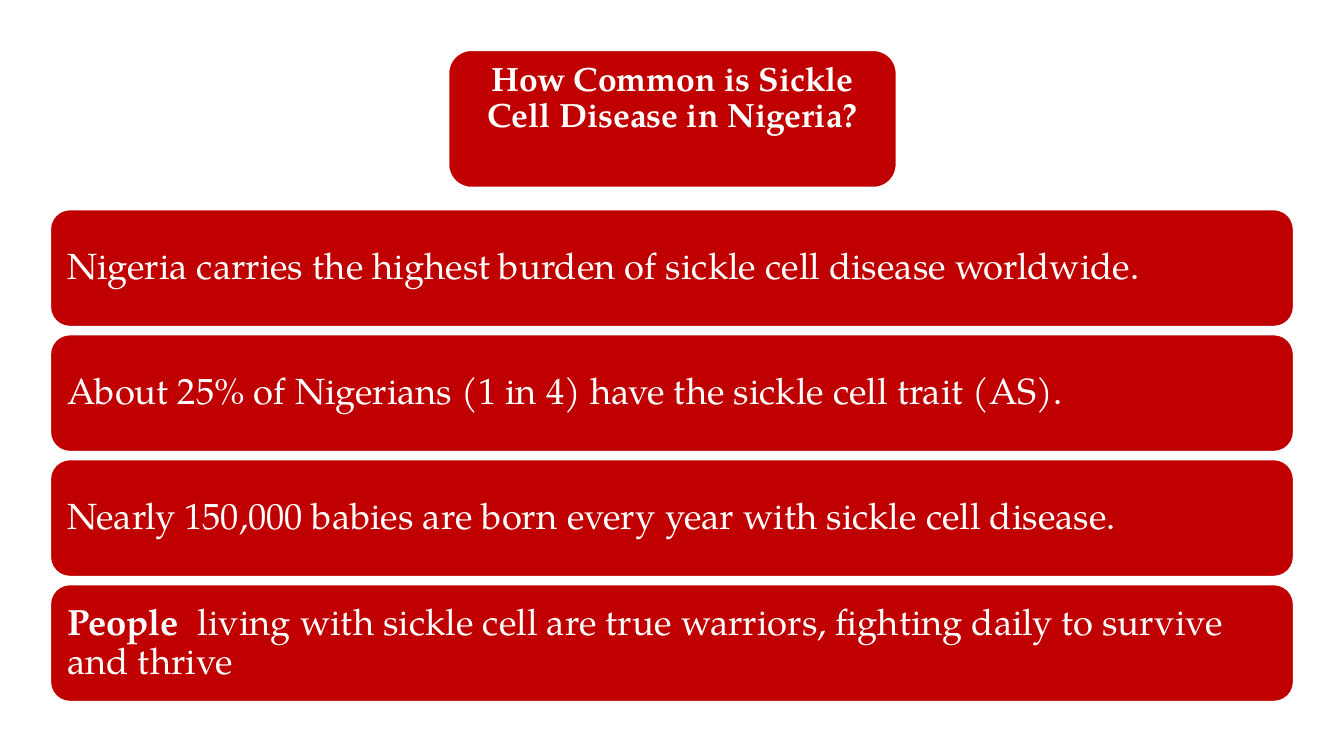
"""Build a slide on how common sickle cell disease is in Nigeria."""
from dataclasses import dataclass

from pptx import Presentation
from pptx.dml.color import RGBColor
from pptx.enum.shapes import MSO_SHAPE
from pptx.enum.text import MSO_ANCHOR, MSO_AUTO_SIZE, PP_ALIGN
from pptx.util import Inches, Pt

ROUND = MSO_SHAPE.ROUNDED_RECTANGLE
TOP, MIDDLE = MSO_ANCHOR.TOP, MSO_ANCHOR.MIDDLE
LEFT, CENTER = PP_ALIGN.LEFT, PP_ALIGN.CENTER
FIXED = MSO_AUTO_SIZE.NONE


@dataclass(frozen=True)
class Theme:
    face: str = "TeX Gyre Pagella"
    red: RGBColor = RGBColor(0xC0, 0x00, 0x00)
    white: RGBColor = RGBColor(0xFF, 0xFF, 0xFF)
    head: Pt = Pt(24)
    body: Pt = Pt(26)
    edge: Pt = Pt(1)
    lead: float = 0.9


def apply(target, values):
    for name, value in values.items():
        setattr(target, name, value)


class Deck:
    def __init__(self, theme):
        self.theme = theme
        self.file = Presentation()
        apply(self.file, {"slide_width": Inches(13.33), "slide_height": Inches(7.5)})
        self.slide = self.file.slides.add_slide(self.file.slide_layouts[5])

    def panel(self, *area):
        shape = self.slide.shapes.add_shape(ROUND, *map(Inches, area))
        shape.shadow.inherit = False
        shape.fill.solid()
        shape.fill.fore_color.rgb = self.theme.red
        shape.line.color.rgb = self.theme.white
        shape.line.width = self.theme.edge
        return shape

    def label(self, shape, runs, size, align, anchor, side, rim):
        frame = shape.text_frame
        apply(frame, {
            "word_wrap": True, "auto_size": FIXED, "vertical_anchor": anchor,
            "margin_left": Inches(side), "margin_right": Inches(side),
            "margin_top": Inches(rim), "margin_bottom": Inches(rim),
        })
        line = frame.paragraphs[0]
        apply(line, {"alignment": align, "line_spacing": self.theme.lead})
        for text, bold in runs:
            run = line.add_run()
            run.text = text
            apply(run.font, {"name": self.theme.face, "size": size, "bold": bold})
            run.font.color.rgb = self.theme.white

    def title(self, text):
        back = self.panel(4.45, 0.5, 4.44, 1.36)
        title = self.slide.shapes.title
        title._element.addprevious(back._element)
        apply(title, {
            "left": Inches(4.52), "top": Inches(0.57),
            "width": Inches(4.3), "height": Inches(1.23),
        })
        self.label(title, [(text, True)], self.theme.head, CENTER, TOP, 0.1, 0.05)

    def card(self, top, runs):
        shape = self.panel(0.5, top, 12.33, 1.16)
        self.label(shape, runs, self.theme.body, LEFT, MIDDLE, 0.11, 0.11)


FACTS = [
    [("Nigeria carries the highest burden of sickle cell disease worldwide.", False)],
    [("About 25% of Nigerians (1 in 4) have the sickle cell trait (AS).", False)],
    [("Nearly 150,000 babies are born every year with sickle cell disease.", False)],
    [("People ", True),
     (" living with sickle cell are true warriors, fighting daily to survive and thrive", False)],
]


def main():
    deck = Deck(Theme())
    deck.title("How Common is Sickle Cell Disease in Nigeria?")
    for row, runs in enumerate(FACTS):
        deck.card(2.08 + 1.24 * row, runs)
    deck.file.save("out.pptx")


if __name__ == "__main__":
    main()
